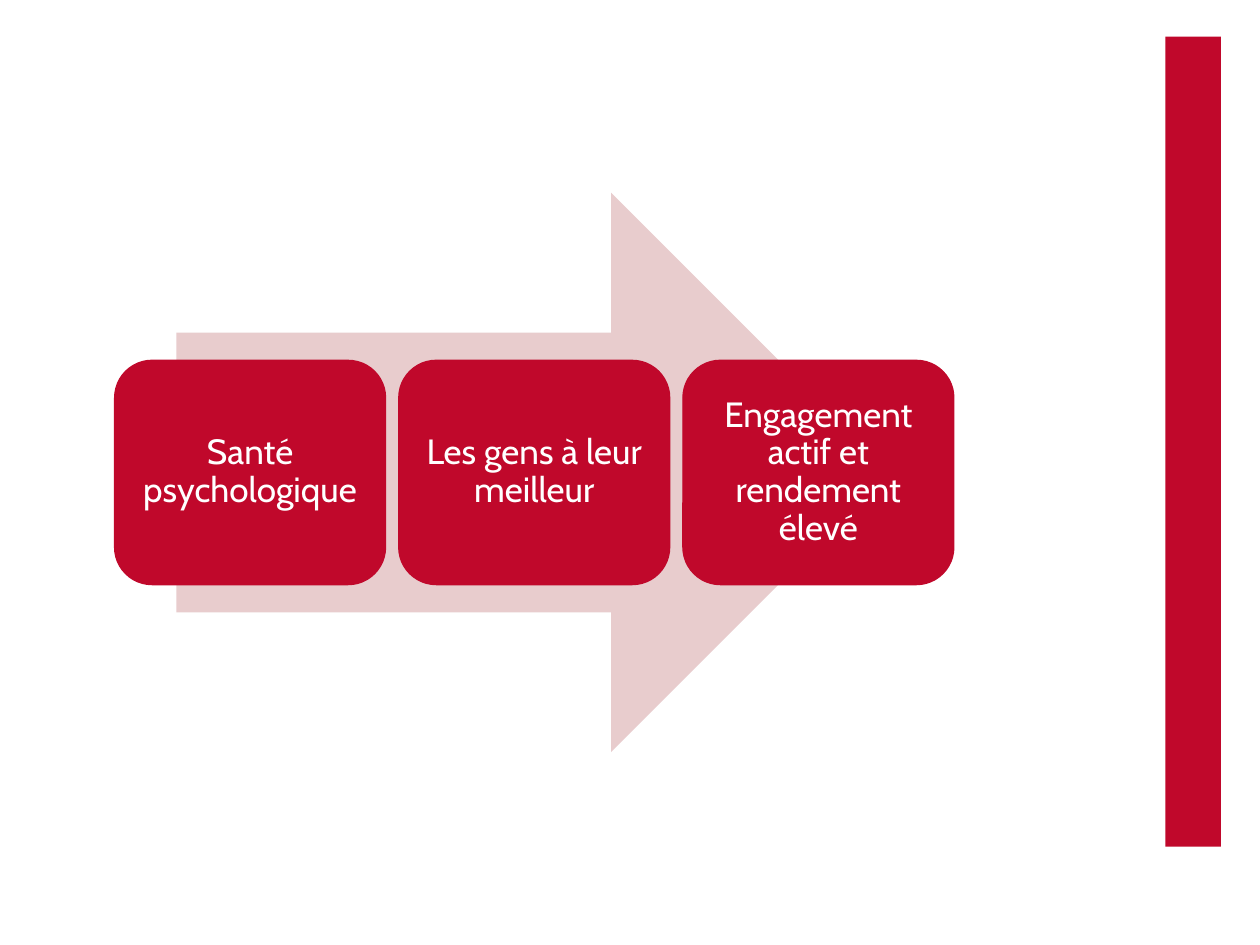
from pptx import Presentation
from pptx.dml.color import RGBColor
from pptx.enum.shapes import MSO_SHAPE
from pptx.enum.text import MSO_ANCHOR, PP_ALIGN
from pptx.util import Inches, Pt

RED = RGBColor(0xC0, 0x08, 0x2B)
PINK = RGBColor(0xE8, 0xCC, 0xCD)
WHITE = RGBColor(0xFF, 0xFF, 0xFF)

STEPS = [
    "Santé psychologique",
    "Les gens à leur meilleur",
    "Engagement actif et rendement élevé",
]
BAR = (9.25, 0.29, 0.44, 6.43)
ARROW = (1.4, 1.53, 5.67, 4.44)
LEFT, TOP, WIDTH, HEIGHT = 0.91, 2.86, 2.15, 1.78
PITCH = 2.255

# The rounded corners already inset the text
FRAME = {
    "word_wrap": True,
    "vertical_anchor": MSO_ANCHOR.MIDDLE,
    "margin_left": 0,
    "margin_right": 0,
    "margin_top": 0,
    "margin_bottom": 0,
}
PARA = {"alignment": PP_ALIGN.CENTER, "line_spacing": 0.9}
FONT = {"name": "Cabin", "size": Pt(20)}


def apply(target, values):
    for name, value in values.items():
        setattr(target, name, value)


def add_block(slide, kind, box, color):
    block = slide.shapes.add_shape(kind, *map(Inches, box))
    block.shadow.inherit = False
    block.fill.solid()
    block.fill.fore_color.rgb = color
    block.line.fill.background()
    return block


def add_step(slide, index, text):
    box = (LEFT + index * PITCH, TOP, WIDTH, HEIGHT)
    step = add_block(slide, MSO_SHAPE.ROUNDED_RECTANGLE, box, RED)
    step.line.color.rgb = RED
    step.line.width = Pt(0.75)
    frame = step.text_frame
    apply(frame, FRAME)
    para = frame.paragraphs[0]
    apply(para, PARA)
    run = para.add_run()
    run.text = text
    apply(run.font, FONT)
    run.font.color.rgb = WHITE


def main():
    deck = Presentation()
    deck.slide_width, deck.slide_height = Inches(10), Inches(7.5)
    slide = deck.slides.add_slide(deck.slide_layouts[6])
    add_block(slide, MSO_SHAPE.RECTANGLE, BAR, RED)
    add_block(slide, MSO_SHAPE.RIGHT_ARROW, ARROW, PINK)
    for index, text in enumerate(STEPS):
        add_step(slide, index, text)
    deck.save("out.pptx")


if __name__ == "__main__":
    main()
